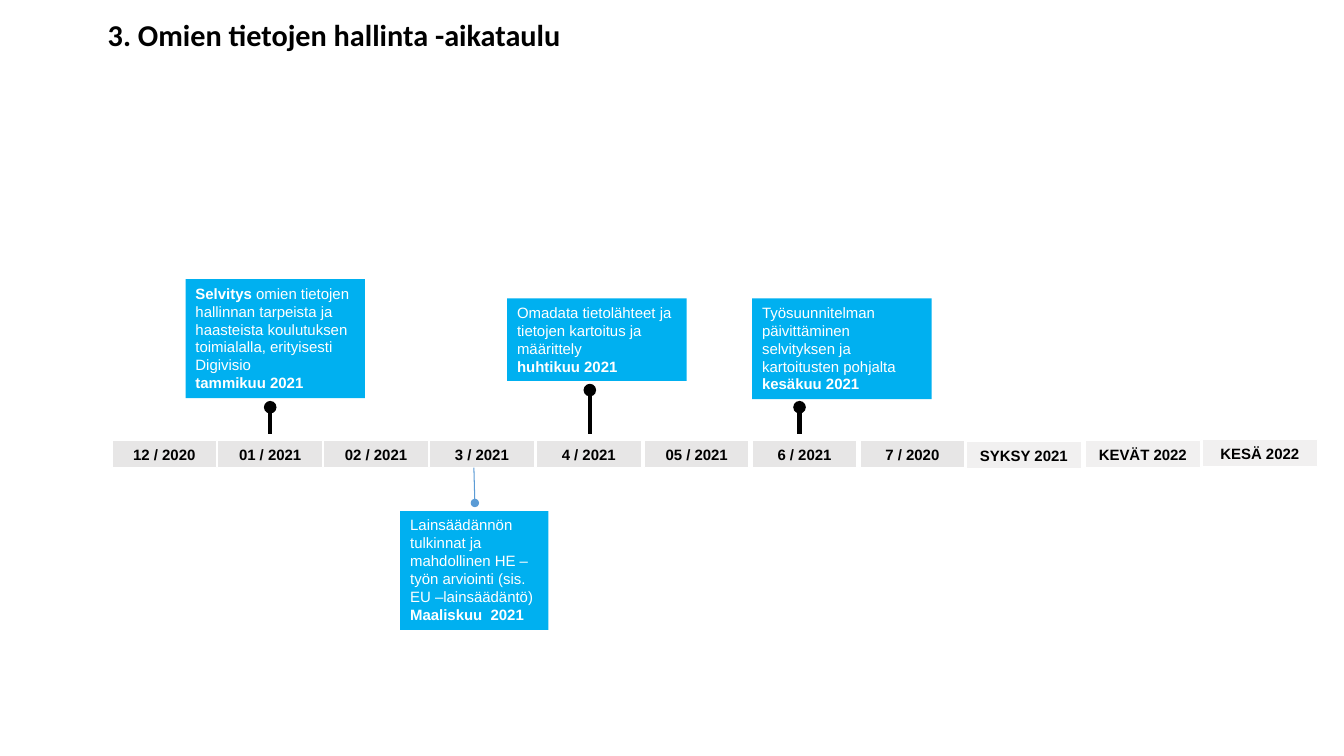
from lxml import etree
from pptx import Presentation
from pptx.dml.color import RGBColor
from pptx.enum.shapes import MSO_CONNECTOR, MSO_SHAPE
from pptx.enum.text import MSO_ANCHOR, PP_ALIGN
from pptx.oxml.ns import qn
from pptx.util import Inches, Pt

TEXT_SIZE = 10.7
BLACK, WHITE, BLUE = "000000", "FFFFFF", "00B0F0"
MONTH_FILL, SEASON_FILL = "E7E6E6", "F1F0F0"
MONTH_WIDTH, SEASON_WIDTH = 1.04, 1.15

# Label, left
MONTHS = [
    ("12 / 2020", 1.11), ("01 / 2021", 2.16), ("02 / 2021", 3.21), ("3 / 2021", 4.26),
    ("4 / 2021", 5.32), ("05 / 2021", 6.39), ("6 / 2021", 7.46), ("7 / 2020", 8.53),
]
# Label, left, top
SEASONS = [("SYKSY 2021", 9.58, 4.38), ("KEVÄT 2022", 10.76, 4.37), ("KESÄ 2022", 11.92, 4.36)]
# Box (left, top, width, height), bold lead, description, date
CALLOUTS = [
    ((1.84, 2.77, 1.78, 1.18), "Selvitys ",
     "omien tietojen hallinnan tarpeista ja haasteista koulutuksen toimialalla, "
     "erityisesti Digivisio", "tammikuu 2021"),
    ((5.03, 2.96, 1.78, 0.82), "",
     "Omadata tietolähteet ja tietojen kartoitus ja määrittely", "huhtikuu 2021"),
    ((3.97, 5.07, 1.47, 1.18), "",
     "Lainsäädännön tulkinnat ja mahdollinen HE –työn arviointi (sis. EU –lainsäädäntö)",
     "Maaliskuu  2021"),
    ((7.46, 2.96, 1.78, 1.0), "",
     "Työsuunnitelman päivittäminen selvityksen ja kartoitusten pohjalta", "kesäkuu 2021"),
]
# Start, end, colour, line width
PINS = [
    ((2.68, 4.04), (2.68, 4.31), BLACK, 3),
    ((5.85, 3.87), (5.85, 4.31), BLACK, 3),
    ((7.93, 4.04), (7.93, 4.31), BLACK, 3),
    ((4.71, 4.99), (4.70, 4.64), "5B9BD5", 0.75),
]


def rgb(value):
    return RGBColor.from_string(value)


def set_font(font, size, color, name="Arial", bold=None):
    font.name, font.size, font.bold = name, Pt(size), bold
    font.color.rgb = rgb(color)


def add_title(s, text):
    sp = s.shapes.add_textbox(Inches(0.97), Inches(0.2), Inches(11.29), Inches(0.68))
    tf = sp.text_frame
    tf.word_wrap = True
    tf.margin_top = 0
    p = tf.paragraphs[0]
    p.text = text
    p.line_spacing = 0.9
    set_font(p.font, 21.6, BLACK, "Calibri", True)


def add_box(s, box, fill):
    sp = s.shapes.add_shape(MSO_SHAPE.RECTANGLE, *[Inches(v) for v in box])
    sp.shadow.inherit = False
    sp.fill.solid()
    sp.fill.fore_color.rgb = rgb(fill)
    sp.line.fill.background()
    sp.text_frame.word_wrap = True
    return sp


def add_period(s, label, left, top, width, fill):
    sp = add_box(s, (left, top, width, 0.27), fill)
    sp.line.color.rgb = rgb(WHITE)
    sp.line.width = Pt(1)
    tf = sp.text_frame
    tf.margin_left = tf.margin_right = tf.margin_top = tf.margin_bottom = 0
    tf.vertical_anchor = MSO_ANCHOR.MIDDLE
    p = tf.paragraphs[0]
    p.text = label
    p.alignment = PP_ALIGN.CENTER
    set_font(p.font, TEXT_SIZE, BLACK, bold=True)


def add_callout(s, box, lead, description, date):
    tf = add_box(s, box, BLUE).text_frame
    tf.vertical_anchor = MSO_ANCHOR.TOP
    p = tf.paragraphs[0]
    if lead:
        r = p.add_run()
        r.text = lead
        r.font.bold = True
    p.add_run().text = description
    tf.add_paragraph().text = date
    for p, bold in zip(tf.paragraphs, (None, True)):
        p.alignment = PP_ALIGN.LEFT
        set_font(p.font, TEXT_SIZE, WHITE, bold=bold)


def add_pin(s, start, end, color, width):
    ends = [Inches(v) for v in start + end]
    line = s.shapes.add_connector(MSO_CONNECTOR.STRAIGHT, *ends)
    line.line.color.rgb = rgb(color)
    line.line.width = Pt(width)
    etree.SubElement(line.line._get_or_add_ln(), qn("a:headEnd"), type="oval")
    etree.SubElement(line._element.spPr, qn("a:effectLst"))


def main():
    prs = Presentation()
    prs.slide_width, prs.slide_height = Inches(13.33), Inches(7.5)
    s = prs.slides.add_slide(prs.slide_layouts[6])

    add_title(s, "3. Omien tietojen hallinta -aikataulu")

    # Timeline
    for label, left in MONTHS:
        add_period(s, label, left, 4.37, MONTH_WIDTH, MONTH_FILL)
    for label, left, top in SEASONS:
        add_period(s, label, left, top, SEASON_WIDTH, SEASON_FILL)

    # Milestones
    for callout in CALLOUTS:
        add_callout(s, *callout)
    for pin in PINS:
        add_pin(s, *pin)

    prs.save("out.pptx")


if __name__ == "__main__":
    main()
